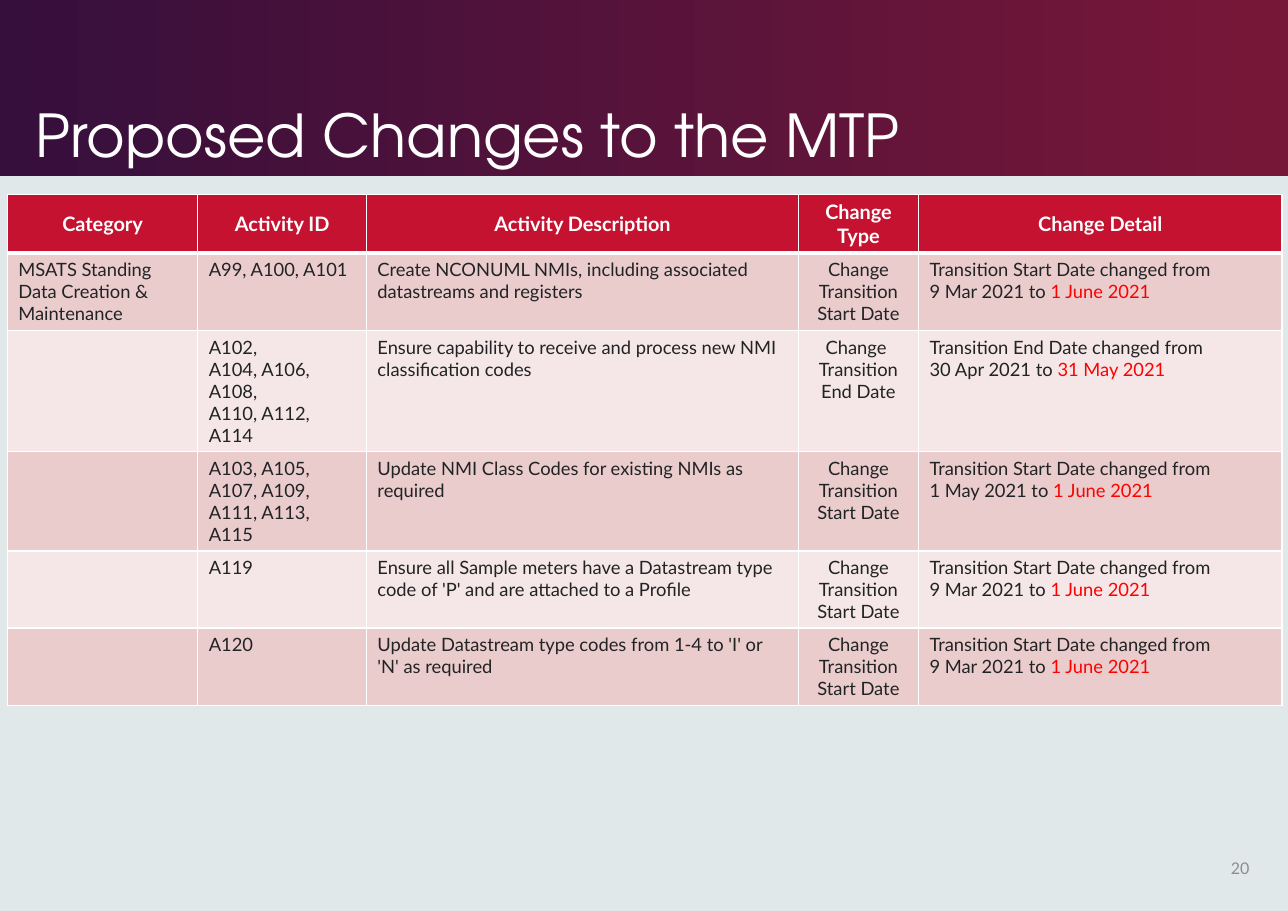
from lxml.etree import SubElement
from pptx import Presentation
from pptx.dml.color import RGBColor
from pptx.enum.shapes import MSO_SHAPE as Shape
from pptx.enum.text import MSO_ANCHOR as Anchor, PP_ALIGN as Align
from pptx.oxml.ns import qn
from pptx.util import Cm, Pt

COLORS = {
    "plum": "360F3C", "wine": "771738", "background": "E0E8EA",
    "header": "C41230", "odd": "EACCCD", "even": "F5E7E8",
    "white": "FFFFFF", "text": "222324", "new_date": "FF0000", "grey": "8D8D8E",
}
NO_BREAK_SPACE = chr(160)  # written as ~ in the texts below
HEADINGS = ["Category", "Activity ID", "Activity Description", "Change Type", "Change Detail"]
COLUMN_WIDTHS = [4.39, 3.89, 9.96, 2.77, 8.38]
TYPE_COLUMN = 3
START_TYPE = "Change Transition Start Date"
# Category, activity IDs, description, change type, moved date, old date, new date
CHANGES = [
    ("MSATS Standing Data Creation & Maintenance", "A99, A100, A101",
     "Create NCONUML NMIs, including associated datastreams and registers",
     START_TYPE, "Start", "9~Mar~2021", "1 June 2021"),
    ("", "A102, A104,~A106, A108, A110,~A112, A114",
     "Ensure capability to receive and process new NMI classification codes",
     "Change~\nTransition End Date", "End", "30~Apr~2021", "31 May 2021"),
    ("", "A103, A105, A107, A109, A111, A113, A115",
     "Update NMI Class Codes for existing NMIs as required",
     START_TYPE, "Start", "1~May~2021", "1 June 2021"),
    ("", "A119",
     "Ensure all Sample meters have a Datastream type code of 'P' and are attached to a Profile",
     START_TYPE, "Start", "9~Mar~2021", "1 June 2021"),
    ("", "A120",
     "Update Datastream type codes from 1-4 to 'I' or 'N' as required",
     START_TYPE, "Start", "9~Mar~2021", "1 June 2021"),
]


def color(name):
    return RGBColor.from_string(COLORS[name])


class SlideBuilder:
    heading_font = "TeX Gyre Adventor"
    body_font = "Lato"

    def __init__(self, slide):
        self.slide = slide

    def background(self, name):
        fill = self.slide.background.fill
        fill.solid()
        fill.fore_color.rgb = color(name)

    def gradient_band(self, left, top, width, height, stops):
        band = self.slide.shapes.add_shape(
            Shape.RECTANGLE, Cm(left), Cm(top), Cm(width), Cm(height))
        band.shadow.inherit = False
        band.line.fill.background()
        band.fill.gradient()
        band.fill.gradient_angle = 0
        for stop, (position, name) in zip(band.fill.gradient_stops, stops):
            stop.position = position
            stop.color.rgb = color(name)

    def run(self, paragraph, text, size, name, font=None, bold=False):
        run = paragraph.add_run()
        run.text = text.replace("~", NO_BREAK_SPACE)
        run.font.name = font or self.body_font
        run.font.size = Pt(size)
        run.font.bold = bold
        run.font.color.rgb = color(name)

    def text(self, left, top, width, height, text, size, name, anchor,
             align=Align.LEFT, font=None, spacing=None):
        box = self.slide.shapes.add_textbox(Cm(left), Cm(top), Cm(width), Cm(height))
        frame = box.text_frame
        frame.word_wrap = True
        frame.vertical_anchor = anchor
        paragraph = frame.paragraphs[0]
        paragraph.alignment = align
        paragraph.line_spacing = spacing
        self.run(paragraph, text, size, name, font)

    def table(self, left, top, height, widths, row_count, row_height):
        frame = self.slide.shapes.add_table(
            row_count, len(widths), Cm(left), Cm(top), Cm(sum(widths)), Cm(height))
        for column, width in zip(frame.table.columns, widths):
            column.width = Cm(width)
        for row in frame.table.rows:
            row.height = Cm(row_height)
        frame.height = Cm(height)  # rows grow with their text
        return frame.table

    def borders(self, cell, top, bottom):
        properties = cell._tc.get_or_add_tcPr()
        for side, width in (("L", 1), ("R", 1), ("T", top), ("B", bottom)):
            line = SubElement(properties, qn(f"a:ln{side}"), w=str(Pt(width)))
            fill = SubElement(line, qn("a:solidFill"))
            SubElement(fill, qn("a:srgbClr"), val=COLORS["white"])

    def cell(self, cell, runs, fill, size, align=Align.LEFT, anchor=Anchor.TOP,
             bold=False, top=1, bottom=1):
        self.borders(cell, top, bottom)
        cell.fill.solid()
        cell.fill.fore_color.rgb = color(fill)
        cell.vertical_anchor = anchor
        frame = cell.text_frame
        paragraph = frame.paragraphs[0]
        paragraph.alignment = align
        for text, name in runs:
            for index, line in enumerate(text.split("\n")):
                if index:
                    paragraph = frame.add_paragraph()
                    paragraph.alignment = align
                if line:
                    self.run(paragraph, line, size, name, bold=bold)


def main():
    presentation = Presentation()
    presentation.slide_width, presentation.slide_height = Cm(29.7), Cm(21)
    builder = SlideBuilder(presentation.slides.add_slide(presentation.slide_layouts[6]))

    # Title band
    builder.background("background")
    builder.gradient_band(0, 0, 29.7, 4.06, [(0, "plum"), (0.99, "wine")])
    builder.text(0.58, 0.41, 21.92, 3.65, "Proposed Changes to the MTP", 38.6, "white",
                 Anchor.BOTTOM, font=builder.heading_font, spacing=0.9)

    # Table header
    table = builder.table(0.17, 4.48, 10.24, COLUMN_WIDTHS, len(CHANGES) + 1, 1.04)
    for column, heading in enumerate(HEADINGS):
        builder.cell(table.cell(0, column), [(heading, "white")], "header", 13,
                     Align.CENTER, Anchor.MIDDLE, bold=True, bottom=3)

    # Table body
    for row, (*texts, moved, old_date, new_date) in enumerate(CHANGES, start=1):
        cells = [[(text, "text")] for text in texts]
        cells.append([(f"Transition {moved} Date changed from {old_date} to ", "text"),
                      (new_date, "new_date")])
        for column, runs in enumerate(cells):
            builder.cell(table.cell(row, column), runs, "odd" if row % 2 else "even", 12,
                         Align.CENTER if column == TYPE_COLUMN else Align.LEFT,
                         top=3 if row == 1 else 1)

    # Page number
    builder.text(27.66, 19.46, 1.4, 1.12, "20", 10.5, "grey", Anchor.MIDDLE, Align.RIGHT)

    presentation.save("out.pptx")


if __name__ == "__main__":
    main()
